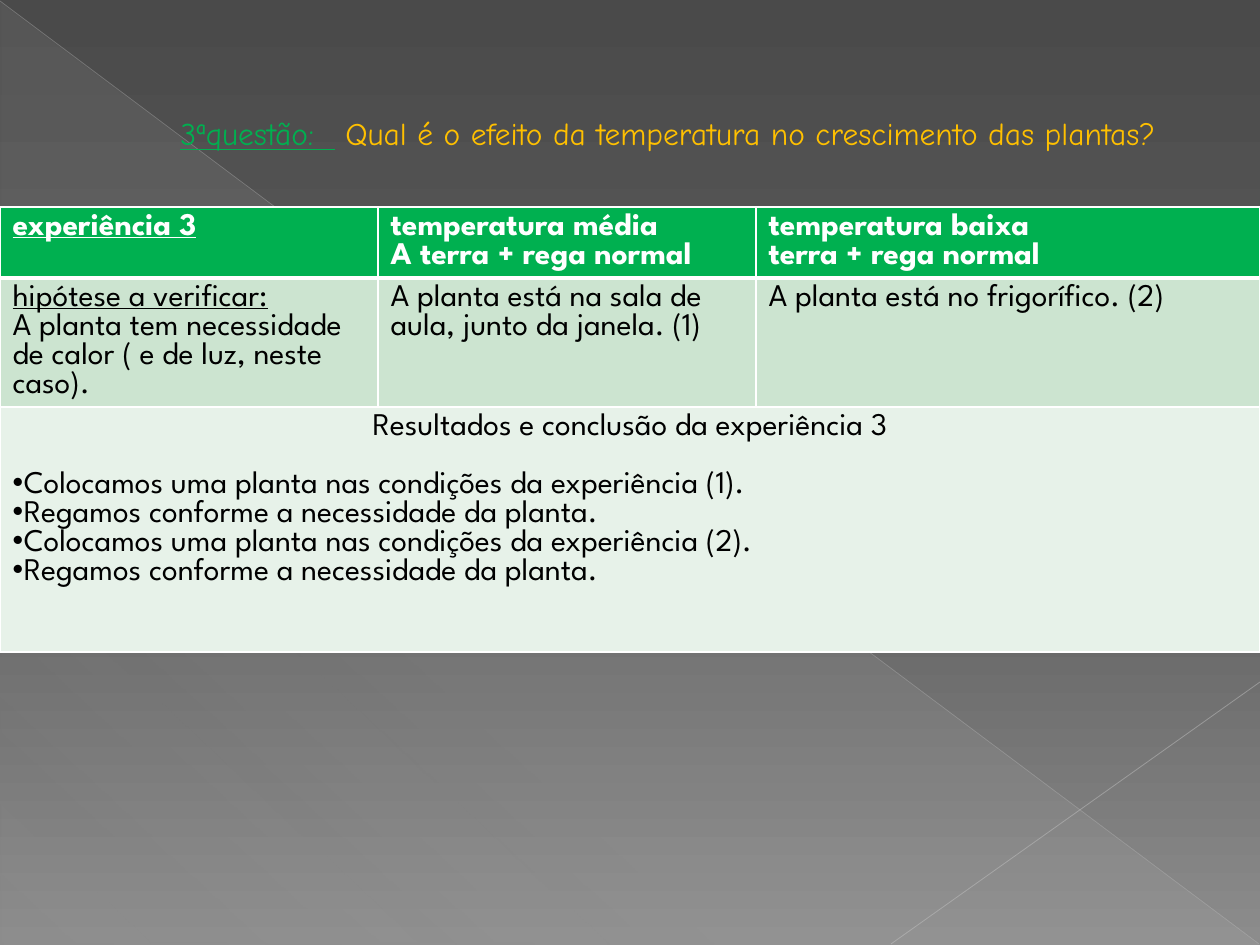
from lxml import etree
from pptx import Presentation
from pptx.dml.color import RGBColor
from pptx.enum.shapes import MSO_CONNECTOR, MSO_SHAPE
from pptx.enum.text import MSO_ANCHOR, PP_ALIGN
from pptx.oxml import parse_xml
from pptx.oxml.ns import nsdecls, qn
from pptx.util import Pt

STRAIGHT, TRIANGLE = MSO_CONNECTOR.STRAIGHT, MSO_SHAPE.RIGHT_TRIANGLE
MIDDLE, CENTER = MSO_ANCHOR.MIDDLE, PP_ALIGN.CENTER
PX = 914400 / 126
WIDTH, HEIGHT = 1260, 945
TITLE_FONT, TABLE_FONT = "Comic Neue", "League Spartan"
GREEN, YELLOW, WHITE, BLACK = "00B050", "FFC000", "FFFFFF", "000000"

# Content
TITLE = [
    ("3ªquestão:  ", dict(color=GREEN, underline=True)),
    (" Qual é o efeito da temperatura no crescimento das plantas?", dict(color=YELLOW)),
]
UNDERLINED = dict(underline=True)
BULLET = dict(bullet="•")
ROWS = [
    [
        [("experiência 3", UNDERLINED)],
        [("temperatura média", {}), ("A terra + rega normal", {})],
        [("temperatura baixa", {}), ("terra + rega normal", {})],
    ],
    [
        [("hipótese a verificar:", UNDERLINED),
         ("A planta tem necessidade de calor ( e de luz, neste caso).", {})],
        [("A planta está na sala de aula, junto da janela. (1)", {})],
        [("A planta está no frigorífico. (2)", {})],
    ],
    [
        [("Resultados e conclusão da experiência 3", dict(align=CENTER, after=16.6)),
         ("Colocamos uma planta nas condições da experiência (1).", BULLET),
         ("Regamos conforme a necessidade da planta.", BULLET),
         ("Colocamos uma planta nas condições da experiência (2).", BULLET),
         ("Regamos conforme a necessidade da planta.", BULLET)],
    ],
]
COLUMN_WIDTHS = [378, 378, 504]
ROW_HEIGHTS = [71, 129, 245]
ROW_FILLS = [GREEN, "CCE4D0", "E7F2E9"]
TABLE_TOP = 207

# Gradient stops: position %, colour, opacity %
BACKGROUND = [(0, "4A4A4A", 100), (60, "626262", 100), (100, "8C8C8C", 100)]
SHEEN = [(0, "D2D2D2", 10), (70, "D2D2D2", 8), (100, "D2D2D2", 1)]
# Lines: start, end, colour, width in points, opacity %
LINES = [
    ((0, 1), (1259, 944), "BFBFBF", 0.39, 35),
    ((1260, 682), (891, 944), "C6C6C6", 0.47, 45),
]


def px(*values):
    return [round(value * PX) for value in values]


def rgb(value):
    return RGBColor.from_string(value)


def add_text(paragraph, text, font=TABLE_FONT, size=18, color=BLACK, bold=False,
             underline=False, align=None, after=None, bullet=None):
    run = paragraph.add_run()
    run.text = text
    run.font.name, run.font.size = font, Pt(size)
    run.font.bold, run.font.underline = bold, underline
    run.font.color.rgb = rgb(color)
    if align is not None:
        paragraph.alignment = align
    if after is not None:
        paragraph.space_after = Pt(after)
    if bullet:
        properties = paragraph._p.get_or_add_pPr()
        etree.SubElement(properties, qn("a:buChar")).set("char", bullet)


def set_gradient(parent, stops, angle):
    """Replace the solid fill inside parent with a linear gradient."""
    stop_xml = "".join(
        f'<a:gs pos="{position * 1000}"><a:srgbClr val="{color}">'
        f'<a:alpha val="{opacity * 1000}"/></a:srgbClr></a:gs>'
        for position, color, opacity in stops)
    gradient = parse_xml(
        f'<a:gradFill {nsdecls("a")} rotWithShape="1"><a:gsLst>{stop_xml}</a:gsLst>'
        f'<a:lin ang="{angle * 60000}" scaled="0"/></a:gradFill>')
    parent.replace(parent.find(qn("a:solidFill")), gradient)


def set_borders(cell, **widths):
    """Borders come before the fill in the cell properties."""
    properties = cell._tc.get_or_add_tcPr()
    for index, side in enumerate("LRTB"):
        properties.insert(index, parse_xml(
            f'<a:ln{side} {nsdecls("a")} w="{Pt(widths.get(side, 1))}"><a:solidFill>'
            f'<a:srgbClr val="{WHITE}"/></a:solidFill></a:ln{side}>'))


def add_line(slide, start, end, color, width, opacity):
    line = slide.shapes.add_connector(STRAIGHT, *px(*start, *end))
    line.line.width = Pt(width)
    line.line.color.rgb = rgb(color)
    color_element = line._element.spPr.find(".//" + qn("a:srgbClr"))
    etree.SubElement(color_element, qn("a:alpha")).set("val", str(opacity * 1000))
    etree.SubElement(line._element.spPr, qn("a:effectLst"))


def add_backdrop(slide):
    slide.background.fill.solid()
    set_gradient(slide.element.find(".//" + qn("p:bgPr")), BACKGROUND, 90)
    triangle = slide.shapes.add_shape(TRIANGLE, *px(1, 2, 1259, 943))
    triangle.shadow.inherit = False
    triangle.line.fill.background()
    triangle.fill.solid()
    set_gradient(triangle._element.spPr, SHEEN, 133)
    for line in LINES:
        add_line(slide, *line)


def add_table(slide):
    table = slide.shapes.add_table(
        len(ROW_HEIGHTS), len(COLUMN_WIDTHS),
        *px(0, TABLE_TOP, WIDTH, sum(ROW_HEIGHTS))).table
    for column, width in zip(table.columns, px(*COLUMN_WIDTHS)):
        column.width = width
    for row, height in zip(table.rows, px(*ROW_HEIGHTS)):
        row.height = height
    table.cell(2, 0).merge(table.cell(2, 2))

    header_rule = [dict(B=3), dict(T=3), {}]
    for row_index, contents in enumerate(ROWS):
        is_header = row_index == 0
        for cell in table.rows[row_index].cells:
            cell.fill.solid()
            cell.fill.fore_color.rgb = rgb(ROW_FILLS[row_index])
            set_borders(cell, **header_rule[row_index])
        for column_index, paragraphs in enumerate(contents):
            frame = table.cell(row_index, column_index).text_frame
            for index, (text, style) in enumerate(paragraphs):
                paragraph = frame.add_paragraph() if index else frame.paragraphs[0]
                add_text(paragraph, text, bold=is_header,
                         color=WHITE if is_header else BLACK, **style)


def add_title(slide):
    frame = slide.shapes.add_textbox(*px(168, 88, 1074, 90)).text_frame
    frame.word_wrap = True
    frame.vertical_anchor = MIDDLE
    for text, style in TITLE:
        add_text(frame.paragraphs[0], text, font=TITLE_FONT, **style)


def main():
    presentation = Presentation()
    presentation.slide_width, presentation.slide_height = px(WIDTH, HEIGHT)
    slide = presentation.slides.add_slide(presentation.slide_layouts[6])
    add_backdrop(slide)
    add_table(slide)
    add_title(slide)
    presentation.save("out.pptx")


if __name__ == "__main__":
    main()
